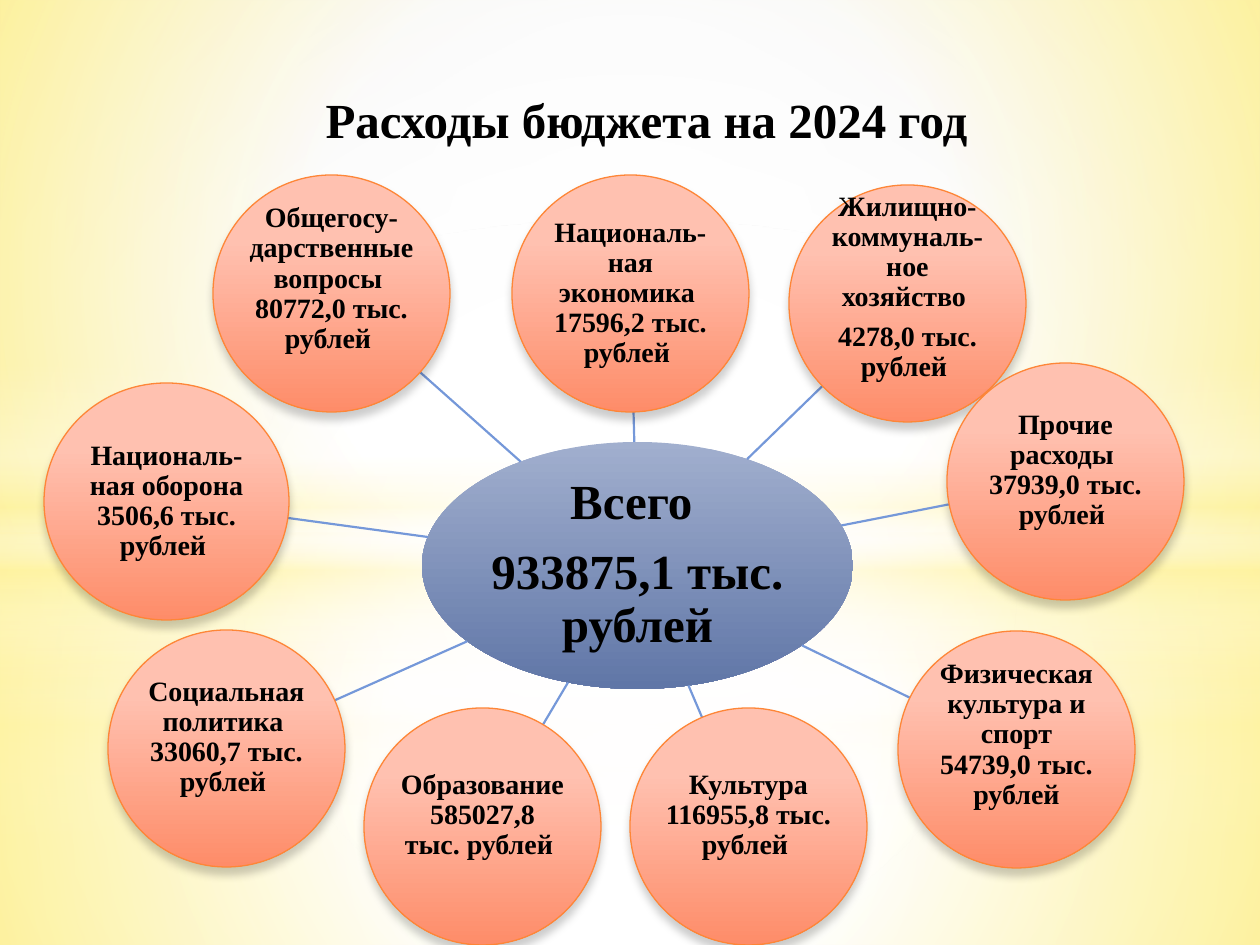
from dataclasses import dataclass
from math import hypot

from pptx import Presentation
from pptx.dml.color import RGBColor
from pptx.enum.shapes import MSO_CONNECTOR as Connector, MSO_SHAPE as Shape
from pptx.enum.text import MSO_ANCHOR as Anchor, PP_ALIGN as Align
from pptx.oxml import parse_xml
from pptx.oxml.ns import nsdecls, qn
from pptx.util import Emu, Pt

PX_PER_INCH = 126
WIDTH, HEIGHT = 1260, 945
FONT = "Times New Roman"
CIRCLE = 237
COLORS = {
    "white": "FFFFFF", "gray": "D1D1D1", "yellow": "FFF39D", "text": "000000",
    "hub_top": "A1AFCE", "hub_bottom": "6076A7", "spoke": "7598D9",
    "circle_top": "FFC1B0", "circle_bottom": "FE8C69", "circle_line": "FE8637",
}


@dataclass(frozen=True)
class Stop:
    position: int
    color: str
    opacity: int = 100


@dataclass(frozen=True)
class Gradient:
    """Vertical, or circular when focus (left, top, right, bottom in %) is given."""
    stops: tuple[Stop, ...]
    focus: tuple[int, ...] = ()


@dataclass(frozen=True)
class Ellipse:
    left: int
    top: int
    paragraphs: tuple[str, ...]
    lift: int = 0
    gap: bool = False
    width: int = CIRCLE
    height: int = CIRCLE

    @property
    def center(self) -> tuple[float, float]:
        return self.left + self.width / 2, self.top + self.height / 2


@dataclass(frozen=True)
class Layer:
    kind: Shape
    top: int
    height: int
    gradient: Gradient


def glow(edge: str, *stops: tuple[int, int], edge_opacity: int) -> Gradient:
    """White centre stops (position, opacity) running out to an edge colour."""
    inner = tuple(Stop(position, "white", opacity) for position, opacity in stops)
    return Gradient(inner + (Stop(100, edge, edge_opacity),), (50, 50, 50, 50))


BACKDROP = Gradient((Stop(0, "white"), Stop(42, "white"), Stop(100, "gray")), (24, 44, 24, 12))
BAND = Gradient((Stop(0, "white", 0), Stop(29, "white", 30), Stop(45, "yellow", 40),
                 Stop(55, "white", 26), Stop(65, "yellow", 60), Stop(100, "white", 0)))
LAYERS = (
    Layer(Shape.RECTANGLE, 703, 242, glow("yellow", (0, 91), (37, 76), edge_opacity=79)),
    Layer(Shape.RECTANGLE, 0, 703, glow("yellow", (0, 89), (48, 62), edge_opacity=79)),
    Layer(Shape.RECTANGLE, 519, 315, BAND),
    Layer(Shape.OVAL, 220, 703, glow("white", (0, 100), (56, 0), edge_opacity=0)),
    Layer(Shape.RECTANGLE, 533, 412, glow("yellow", (0, 92), (37, 77), edge_opacity=80)),
    Layer(Shape.RECTANGLE, 0, 533, glow("yellow", (0, 90), (48, 63), edge_opacity=80)),
    Layer(Shape.RECTANGLE, 365, 315, BAND),
    Layer(Shape.OVAL, 220, 703, glow("white", (0, 100), (54, 0), edge_opacity=0)),
)
HUB_FILL = Gradient((Stop(0, "hub_top"), Stop(100, "hub_bottom")))
CIRCLE_FILL = Gradient((Stop(28, "circle_top"), Stop(100, "circle_bottom")))

HUB = Ellipse(422, 442, ("Всего ", "933875,1 тыс. рублей"), gap=True, width=431, height=247)
EXPENSES = (
    Ellipse(213, 175, ("Общегосу-дарственные вопросы ", "80772,0 тыс. рублей "), lift=29),
    Ellipse(44, 383, ("Националь-ная оборона", "3506,6 тыс. рублей "), width=245),
    Ellipse(789, 185, ("Жилищно-коммуналь-ное хозяйство ", "4278,0 тыс. рублей "),
            lift=32, gap=True),
    Ellipse(947, 363, ("Прочие расходы ", "37939,0 тыс. рублей "), lift=22),
    Ellipse(898, 631, ("Физическая культура и спорт", "54739,0 тыс. рублей"), lift=29),
    Ellipse(630, 708, ("Культура", "116955,8 тыс. рублей "), lift=22),
    Ellipse(364, 708, ("Образование", "585027,8 тыс. рублей "), lift=22),
    Ellipse(108, 630, ("Социальная политика ", "33060,7 тыс. рублей "), lift=22),
    Ellipse(512, 175, ("Националь-ная экономика ", "17596,2 тыс. рублей ")),
)


def px(length: float) -> Emu:
    return Emu(round(length * 914400 / PX_PER_INCH))


def rgb(name: str) -> RGBColor:
    return RGBColor.from_string(COLORS[name])


def apply_gradient(owner, fill, gradient: Gradient) -> None:
    stops = "".join(
        f'<a:gs pos="{stop.position * 1000}"><a:srgbClr val="{COLORS[stop.color]}">'
        f'<a:alpha val="{stop.opacity * 1000}"/></a:srgbClr></a:gs>'
        for stop in gradient.stops)
    if gradient.focus:
        sides = " ".join(f'{side}="{value * 1000}"' for side, value in zip("ltrb", gradient.focus))
        direction = f'<a:path path="circle"><a:fillToRect {sides}/></a:path>'
    else:
        direction = '<a:lin ang="5400000" scaled="0"/>'
    fill.background()
    empty = owner.find(".//" + qn("a:noFill"))
    empty.getparent().replace(empty, parse_xml(
        f'<a:gradFill {nsdecls("a")} rotWithShape="1"><a:gsLst>{stops}</a:gsLst>'
        f"{direction}</a:gradFill>"))


def add_filled(page, kind: Shape, left: int, top: int, width: int, height: int,
               gradient: Gradient):
    shape = page.shapes.add_shape(kind, px(left), px(top), px(width), px(height))
    shape.shadow.inherit = False
    shape.line.fill.background()
    apply_gradient(shape._element.spPr, shape.fill, gradient)
    return shape


def write(frame, paragraphs: tuple[str, ...], size: int, gap: bool = False,
          spacing: float = 0.9) -> None:
    frame.word_wrap = True
    for index, text in enumerate(paragraphs):
        para = frame.add_paragraph() if index else frame.paragraphs[0]
        para.alignment = Align.CENTER
        para.line_spacing = spacing
        para.space_after = Pt(round(size * 0.35, 1) if gap else 0)
        span = para.add_run()
        span.text = text
        span.font.name = FONT
        span.font.size = Pt(size)
        span.font.bold = True
        span.font.color.rgb = rgb("text")


def add_ellipse(page, ellipse: Ellipse, gradient: Gradient, size: int, inset: int):
    shape = add_filled(page, Shape.OVAL, ellipse.left, ellipse.top,
                       ellipse.width, ellipse.height, gradient)
    frame = shape.text_frame
    frame.vertical_anchor = Anchor.MIDDLE
    frame.margin_left = frame.margin_right = frame.margin_top = px(inset)
    frame.margin_bottom = px(inset + ellipse.lift)
    write(frame, ellipse.paragraphs, size, ellipse.gap)
    return shape


def edge_toward(ellipse: Ellipse, target: Ellipse) -> tuple[Emu, Emu]:
    """Point where the line between the two centres leaves the first ellipse."""
    (x, y), (target_x, target_y) = ellipse.center, target.center
    dx, dy = target_x - x, target_y - y
    share = 1 / hypot(2 * dx / ellipse.width, 2 * dy / ellipse.height)
    return px(x + dx * share), px(y + dy * share)


def add_spoke(page, hub: Ellipse, expense: Ellipse) -> None:
    spoke = page.shapes.add_connector(
        Connector.STRAIGHT, *edge_toward(hub, expense), *edge_toward(expense, hub))
    spoke.line.color.rgb = rgb("spoke")
    spoke.line.width = Pt(1.25)
    spoke._element.spPr.append(parse_xml(f'<a:effectLst {nsdecls("a")}/>'))


def add_expense(page, expense: Ellipse) -> None:
    circle = add_ellipse(page, expense, CIRCLE_FILL, size=16, inset=1)
    circle.line.color.rgb = rgb("circle_line")
    circle.line.width = Pt(0.75)
    circle._element.spPr.find(qn("a:effectLst")).append(parse_xml(
        f'<a:outerShdw {nsdecls("a")} blurRad="{Pt(5)}" dist="{Pt(4)}" dir="5400000" '
        f'rotWithShape="0"><a:srgbClr val="{COLORS["text"]}"><a:alpha val="20000"/>'
        "</a:srgbClr></a:outerShdw>"))


def add_title(page, text: str) -> None:
    box = page.shapes.add_textbox(px(34), px(96), px(1225), px(59))
    box.text_frame.vertical_anchor = Anchor.BOTTOM
    write(box.text_frame, (text,), 28, spacing=1.0)


def main() -> None:
    deck = Presentation()
    deck.slide_width, deck.slide_height = px(WIDTH), px(HEIGHT)
    page = deck.slides.add_slide(deck.slide_layouts[6])
    apply_gradient(page._element, page.background.fill, BACKDROP)
    for layer in LAYERS:
        add_filled(page, layer.kind, 0, layer.top, WIDTH, layer.height, layer.gradient)
    add_ellipse(page, HUB, HUB_FILL, size=28, inset=3)
    for expense in EXPENSES:
        add_spoke(page, HUB, expense)
        add_expense(page, expense)
    add_title(page, "Расходы бюджета на 2024 год")
    deck.save("out.pptx")


if __name__ == "__main__":
    main()
